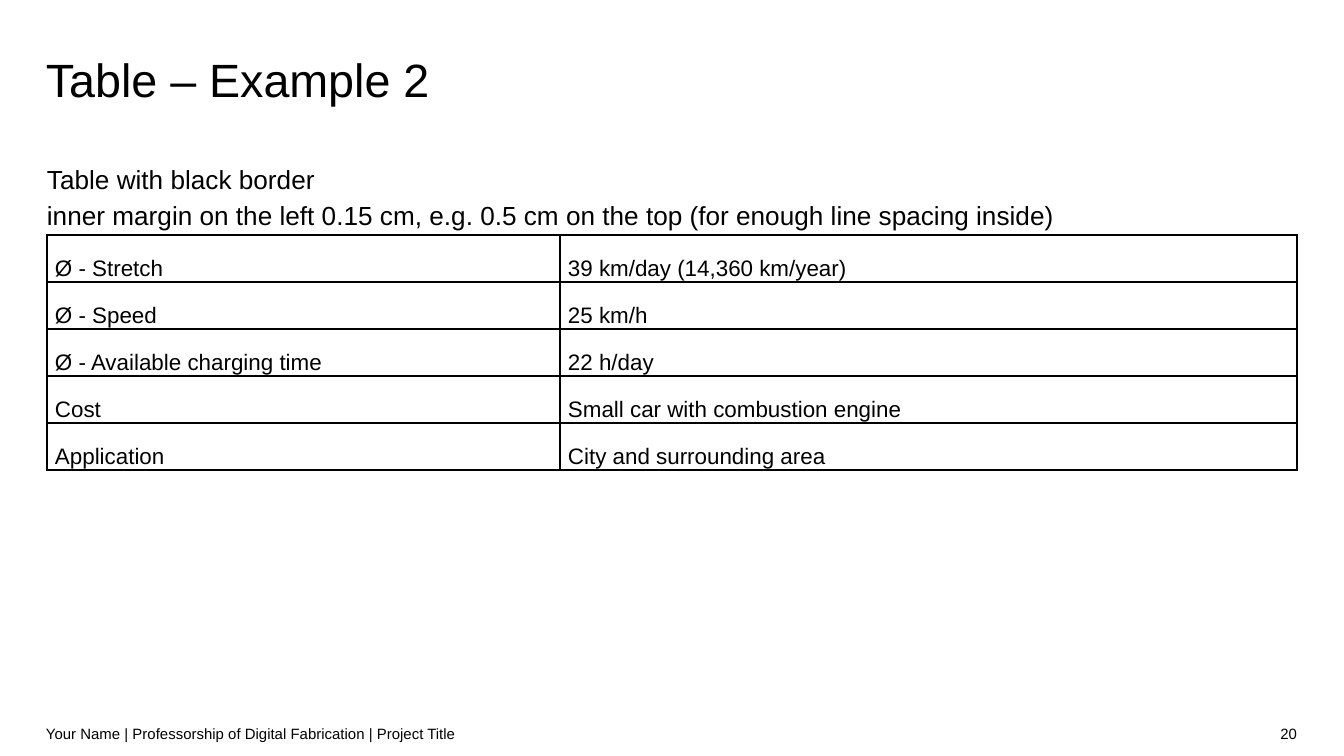
from lxml import etree
from pptx import Presentation
from pptx.dml.color import RGBColor
from pptx.enum.text import MSO_ANCHOR, PP_ALIGN
from pptx.oxml.ns import qn
from pptx.util import Pt

EMU_PER_PX = 9144000 / 1344
LEFT, RIGHT = PP_ALIGN.LEFT, PP_ALIGN.RIGHT
TOP, MIDDLE = MSO_ANCHOR.TOP, MSO_ANCHOR.MIDDLE


def px(length):
    return round(length * EMU_PER_PX)


def color(hex_string):
    return RGBColor.from_string(hex_string)


class SlideBuilder:
    font_name = "Arial"
    ink = "000000"
    border_width = Pt(1)
    cell_margins = (8, 20, 0, 0)

    def __init__(self, slide):
        self.slide = slide

    def add_run(self, paragraph, text, size):
        run = paragraph.add_run()
        run.text = text
        run.font.name = self.font_name
        run.font.size = Pt(size)
        run.font.color.rgb = color(self.ink)

    def set_margins(self, target, margins):
        left, top, right, bottom = map(px, margins)
        target.margin_left, target.margin_top = left, top
        target.margin_right, target.margin_bottom = right, bottom

    def text(self, box, lines, size, align=LEFT, anchor=TOP, spacing=None,
             margins=(0, 0, 0, 0)):
        shape = self.slide.shapes.add_textbox(*map(px, box))
        frame = shape.text_frame
        frame.word_wrap = True
        frame.vertical_anchor = anchor
        self.set_margins(frame, margins)
        paragraph = frame.paragraphs[0]
        paragraph.alignment = align
        paragraph.line_spacing = spacing
        for index, line in enumerate(lines):
            if index:
                paragraph.add_line_break()
            self.add_run(paragraph, line, size)

    def cell_borders(self, cell):
        properties = cell._tc.get_or_add_tcPr()
        for index, side in enumerate(("a:lnL", "a:lnR", "a:lnT", "a:lnB")):
            line = etree.Element(qn(side), w=str(self.border_width))
            fill = etree.SubElement(line, qn("a:solidFill"))
            etree.SubElement(fill, qn("a:srgbClr"), val=self.ink)
            properties.insert(index, line)

    def table(self, left, top, column_widths, row_height, rows, size):
        shape = self.slide.shapes.add_table(
            len(rows), len(column_widths), px(left), px(top),
            px(sum(column_widths)), px(row_height * len(rows)))
        table = shape.table
        table.first_row = False
        table.horz_banding = False
        for column, width in zip(table.columns, column_widths):
            column.width = px(width)
        for row, values in zip(table.rows, rows):
            row.height = px(row_height)
            for cell, value in zip(row.cells, values):
                cell.fill.background()
                cell.vertical_anchor = MIDDLE
                self.set_margins(cell, self.cell_margins)
                self.add_run(cell.text_frame.paragraphs[0], value, size)
                self.cell_borders(cell)


def main():
    presentation = Presentation()
    presentation.slide_width, presentation.slide_height = px(1344), px(756)
    builder = SlideBuilder(
        presentation.slides.add_slide(presentation.slide_layouts[6]))

    # Title and introduction
    builder.text((46, 47, 1251, 56), ["Table – Example 2"], 25,
                 spacing=Pt(32))
    builder.text((47, 159, 1251, 69), [
        "Table with black border",
        "inner margin on the left 0.15 cm, e.g. 0.5 cm on the top "
        "(for enough line spacing inside)",
    ], 14, spacing=1.14)

    # Vehicle data
    builder.table(47, 235, (513, 737), 47, [
        ("Ø - Stretch", "39 km/day (14,360 km/year)"),
        ("Ø - Speed", "25 km/h"),
        ("Ø - Available charging time", "22 h/day"),
        ("Cost", "Small car with combustion engine"),
        ("Application", "City and surrounding area"),
    ], 12)

    # Footer and page number
    footer_style = {"size": 8, "anchor": MIDDLE, "margins": (0, 7, 0, 7)}
    builder.text(
        (46, 714, 950, 40),
        ["Your Name | Professorship of Digital Fabrication | Project Title"],
        **footer_style)
    builder.text((996, 714, 301, 40), ["20"], align=RIGHT, **footer_style)

    presentation.save("out.pptx")


if __name__ == "__main__":
    main()
